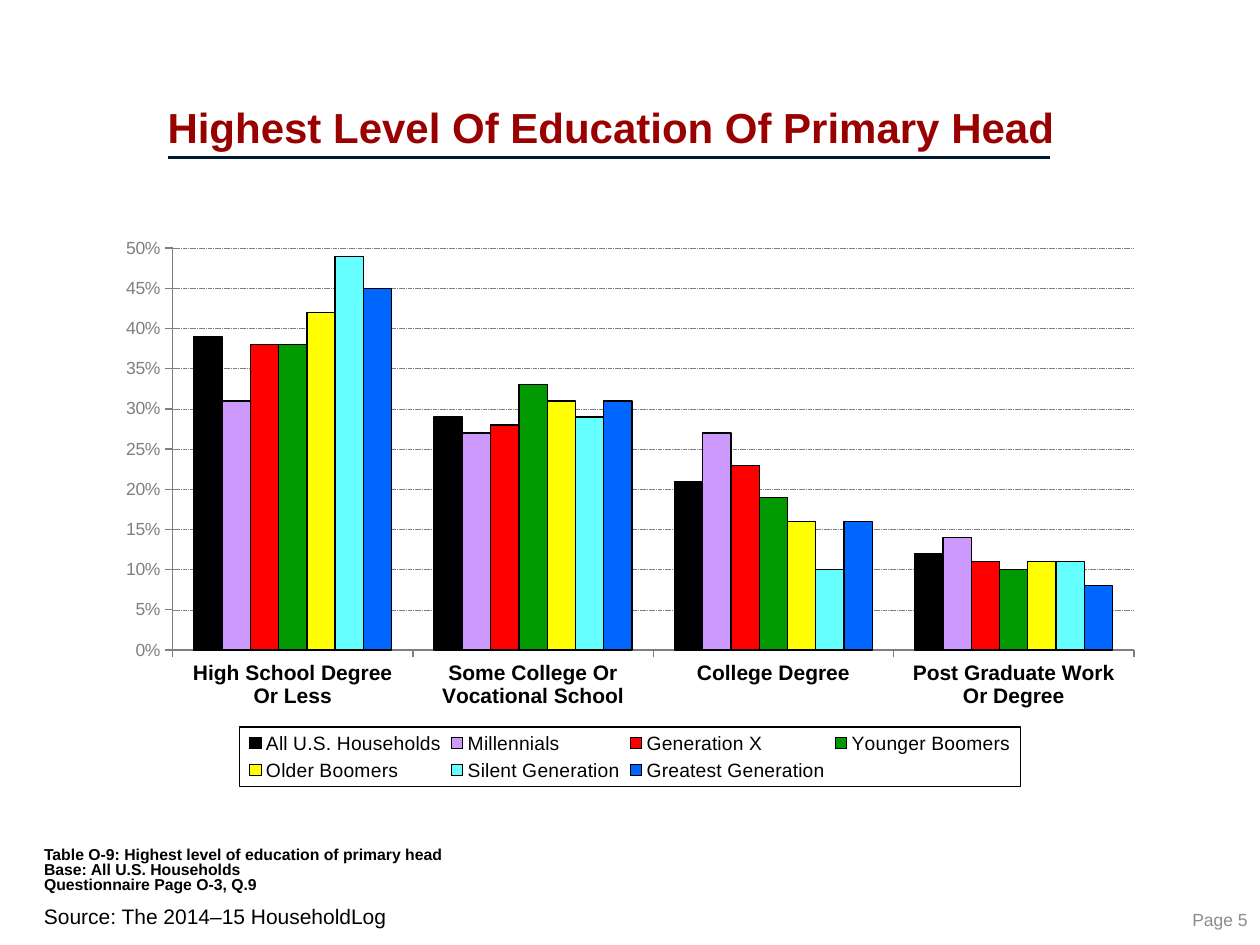
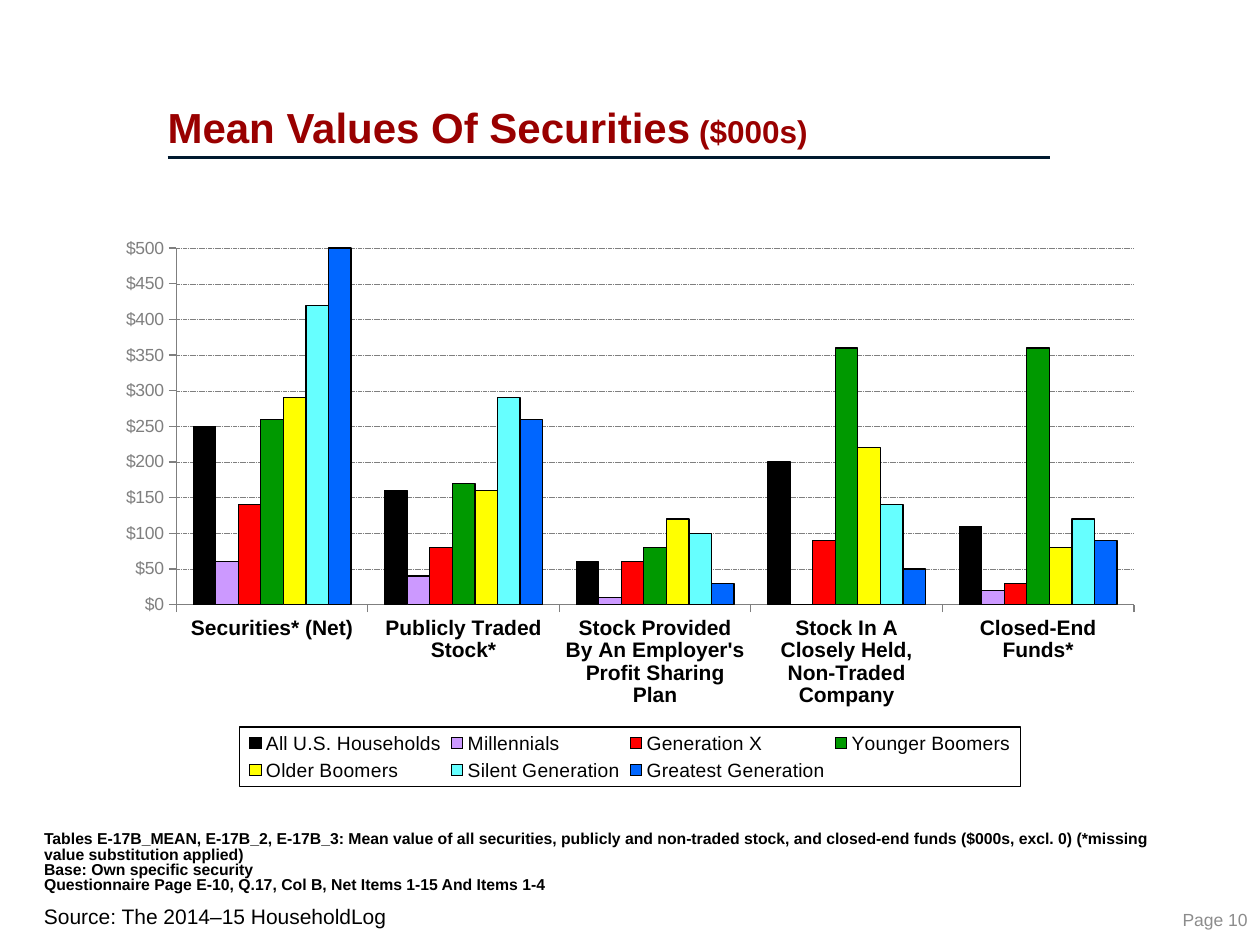
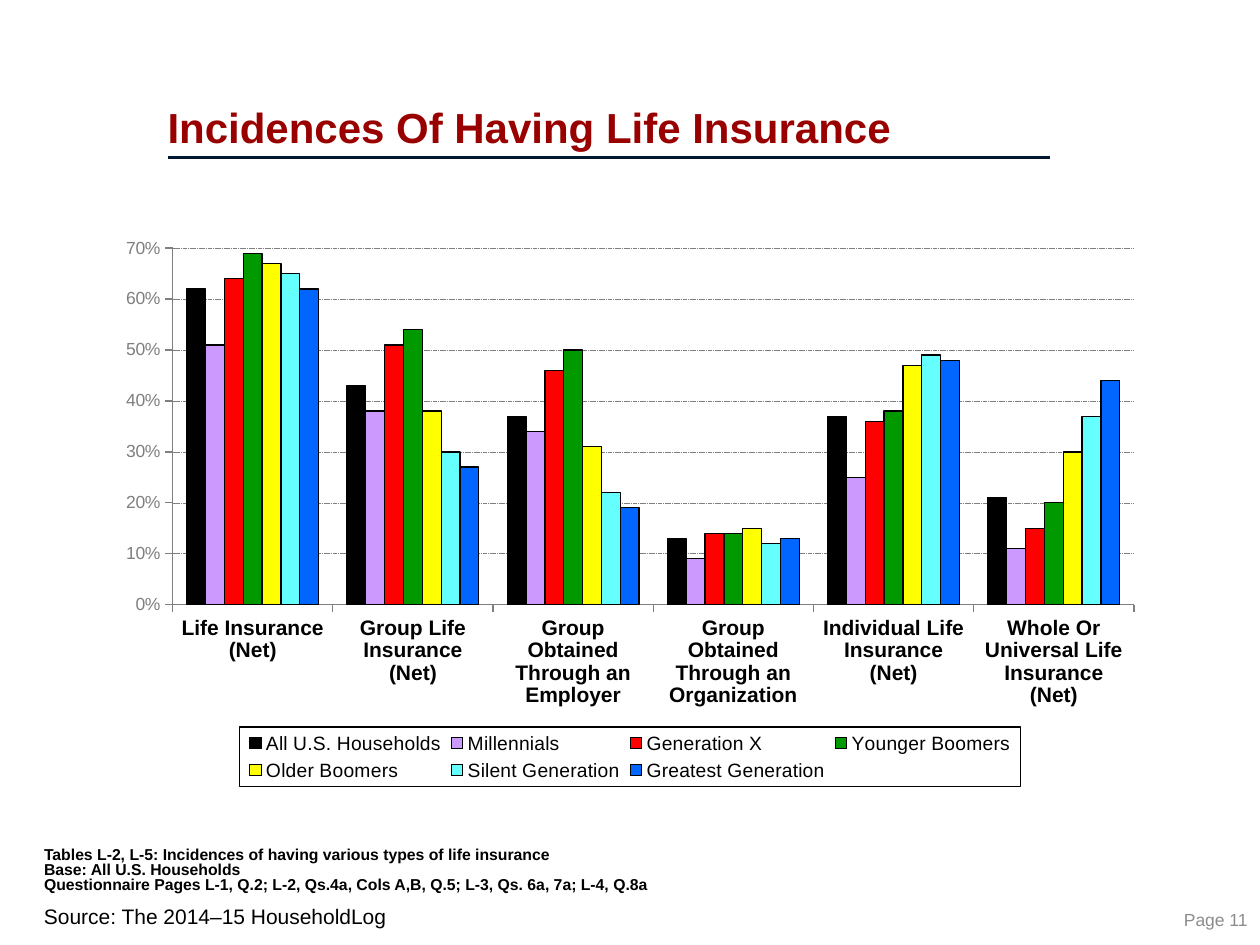
from dataclasses import dataclass

from lxml.etree import SubElement
from pptx import Presentation
from pptx.chart.chart import Chart
from pptx.chart.data import CategoryChartData
from pptx.dml.color import RGBColor
from pptx.enum.chart import XL_CHART_TYPE, XL_LEGEND_POSITION, XL_TICK_MARK
from pptx.enum.dml import MSO_LINE
from pptx.enum.shapes import MSO_CONNECTOR
from pptx.enum.text import MSO_ANCHOR, MSO_AUTO_SIZE, PP_ALIGN
from pptx.oxml import parse_xml
from pptx.oxml.ns import nsdecls, qn
from pptx.slide import Slide
from pptx.text.text import Font, TextFrame
from pptx.util import Inches, Pt

FONT = "Arial"
BLACK = RGBColor(0x00, 0x00, 0x00)
MAROON = RGBColor(0x99, 0x00, 0x00)
NAVY = RGBColor(0x00, 0x19, 0x2F)
AXIS_GRAY = RGBColor(0x7F, 0x7F, 0x7F)
PAGE_GRAY = RGBColor(0x8C, 0x8C, 0x8C)

SOURCE = "Source: The 2014–15 HouseholdLog"
GENERATIONS = {
    "All U.S. Households": BLACK,
    "Millennials": RGBColor(0xCC, 0x99, 0xFF),
    "Generation X": RGBColor(0xFF, 0x00, 0x00),
    "Younger Boomers": RGBColor(0x00, 0x99, 0x00),
    "Older Boomers": RGBColor(0xFF, 0xFF, 0x00),
    "Silent Generation": RGBColor(0x66, 0xFF, 0xFF),
    "Greatest Generation": RGBColor(0x00, 0x66, 0xFF),
}

Box = tuple[float, float, float, float]
CHART_BOX: Box = (0.83, 1.81, 8.33, 4.44)
LEGEND_BOX: Box = (1.9, 5.77, 6.2, 0.47)
PLOT_TOP, PLOT_RIGHT = 1.97, 9.0


@dataclass
class ChartPage:
    page: int
    title: str
    unit: str
    notes: list[str]
    number_format: str
    maximum: float
    step: float
    plot_left: float
    plot_bottom: float
    rows: dict[str, list[float]]


PAGES = [
    ChartPage(
        5, "Highest Level Of Education Of Primary Head", "",
        ["Table O-9: Highest level of education of primary head",
         "Base: All U.S. Households",
         "Questionnaire Page O-3, Q.9"],
        "0%", 0.5, 0.05, 1.37, 5.16,
        {
            "High School Degree Or Less": [0.39, 0.31, 0.38, 0.38, 0.42, 0.49, 0.45],
            "Some College Or Vocational School": [0.29, 0.27, 0.28, 0.33, 0.31, 0.29, 0.31],
            "College Degree": [0.21, 0.27, 0.23, 0.19, 0.16, 0.1, 0.16],
            "Post Graduate Work Or Degree": [0.12, 0.14, 0.11, 0.1, 0.11, 0.11, 0.08],
        },
    ),
    ChartPage(
        10, "Mean Values Of Securities", " ($000s)",
        ["Tables E-17B_MEAN, E-17B_2, E-17B_3: Mean value of all securities, publicly and "
         "non-traded stock, and closed-end funds ($000s, excl. 0) (*missing value "
         "substitution applied)",
         "Base: Own specific security",
         "Questionnaire Page E-10, Q.17, Col B, Net Items 1-15 And Items 1-4"],
        '"$"#,##0', 500, 50, 1.4, 4.8,
        {
            "Securities* (Net)": [250, 60, 140, 260, 290, 420, 500],
            "Publicly Traded Stock*": [160, 40, 80, 170, 160, 290, 260],
            "Stock Provided By An Employer's Profit Sharing Plan": [60, 10, 60, 80, 120, 100, 30],
            "Stock In A Closely Held, Non-Traded Company": [200, 0, 90, 360, 220, 140, 50],
            "Closed-End Funds*": [110, 20, 30, 360, 80, 120, 90],
        },
    ),
    ChartPage(
        11, "Incidences Of Having Life Insurance", "",
        ["Tables L-2, L-5: Incidences of having various types of life insurance",
         "Base: All U.S. Households",
         "Questionnaire Pages L-1, Q.2; L-2, Qs.4a, Cols A,B, Q.5; L-3, Qs. 6a, 7a; L-4, Q.8a"],
        "0%", 0.7, 0.1, 1.37, 4.8,
        {
            "Life Insurance (Net)": [0.62, 0.51, 0.64, 0.69, 0.67, 0.65, 0.62],
            "Group Life Insurance (Net)": [0.43, 0.38, 0.51, 0.54, 0.38, 0.3, 0.27],
            "Group Obtained Through an Employer": [0.37, 0.34, 0.46, 0.5, 0.31, 0.22, 0.19],
            "Group Obtained Through an Organization": [0.13, 0.09, 0.14, 0.14, 0.15, 0.12, 0.13],
            "Individual Life Insurance (Net)": [0.37, 0.25, 0.36, 0.38, 0.47, 0.49, 0.48],
            "Whole Or Universal Life Insurance (Net)": [0.21, 0.11, 0.15, 0.2, 0.3, 0.37, 0.44],
        },
    ),
]


def style(font: Font, size: float, color: RGBColor, bold: bool = False) -> None:
    font.name, font.size, font.bold = FONT, Pt(size), bold
    font.color.rgb = color


def add_text(s: Slide, box: Box, text: str, size: float, color: RGBColor,
             bold: bool = False, wrap: bool = True) -> TextFrame:
    tf = s.shapes.add_textbox(*map(Inches, box)).text_frame
    tf.word_wrap = wrap
    tf.text = text
    for r in tf.paragraphs[0].runs:
        style(r.font, size, color, bold)
    return tf


def add_heading(s: Slide, box: Box, text: str, size: float, color: RGBColor,
                inset: float) -> TextFrame:
    tf = add_text(s, box, text, size, color, bold=True)
    tf.vertical_anchor = MSO_ANCHOR.BOTTOM
    tf.margin_left, tf.margin_right = Inches(inset), 0
    tf.paragraphs[0].line_spacing = 0.8
    return tf


def add_frame(s: Slide, page: int) -> None:
    source = add_text(s, (0.25, 7.12, 8.58, 0.3), SOURCE, 12, BLACK)
    source.auto_size = MSO_AUTO_SIZE.SHAPE_TO_FIT_TEXT
    rule = s.shapes.add_connector(MSO_CONNECTOR.STRAIGHT, Inches(1.33), Inches(1.25),
                                  Inches(8.33), Inches(1.25))
    rule.line.color.rgb, rule.line.width = NAVY, Pt(2)
    SubElement(rule._element.spPr, qn("a:effectLst"))
    number = add_text(s, (9.26, 7.16, 0.74, 0.27), f"Page {page}", 10, PAGE_GRAY, wrap=False)
    number.auto_size = MSO_AUTO_SIZE.SHAPE_TO_FIT_TEXT
    number.vertical_anchor = MSO_ANCHOR.MIDDLE
    number.paragraphs[0].alignment = PP_ALIGN.RIGHT


def add_notes(s: Slide, notes: list[str]) -> None:
    tf = add_heading(s, (0, 6.32, 9.24, 0.82), "\v".join(notes), 9, BLACK, 0.35)
    for br in tf.paragraphs[0]._p.findall(qn("a:br")):
        SubElement(br, qn("a:rPr"), sz="1200")


def chart_layout(box: Box, inner: bool = False) -> object:
    left, top, width, height = CHART_BOX
    x, y, w, h = box
    shares = {"x": (x - left) / width, "y": (y - top) / height, "w": w / width, "h": h / height}
    target = '<c:layoutTarget val="inner"/>' if inner else ""
    modes = '<c:xMode val="edge"/><c:yMode val="edge"/>'
    values = "".join(f'<c:{k} val="{v:.4f}"/>' for k, v in shares.items())
    return parse_xml(f'<c:layout {nsdecls("c")}><c:manualLayout>{target}{modes}{values}'
                     "</c:manualLayout></c:layout>")


def style_axes(chart: Chart, page: ChartPage) -> None:
    cat, val = chart.category_axis, chart.value_axis
    style(cat.tick_labels.font, 12, BLACK, bold=True)
    style(val.tick_labels.font, 10, AXIS_GRAY)
    for axis in (cat, val):
        axis.major_tick_mark, axis.minor_tick_mark = XL_TICK_MARK.OUTSIDE, XL_TICK_MARK.NONE
        axis.format.line.color.rgb, axis.format.line.width = AXIS_GRAY, Pt(0.75)
    val.minimum_scale, val.maximum_scale, val.major_unit = 0, page.maximum, page.step
    val.tick_labels.number_format = page.number_format
    val.tick_labels.number_format_is_linked = False
    grid = val.major_gridlines.format.line
    grid.color.rgb, grid.width, grid.dash_style = AXIS_GRAY, Pt(0.25), MSO_LINE.SQUARE_DOT


def style_legend(chart: Chart) -> None:
    chart.has_legend = True
    legend = chart.legend
    legend.position, legend.include_in_layout = XL_LEGEND_POSITION.BOTTOM, False
    style(legend.font, 11, BLACK)
    element = legend._element
    for old in element.findall(qn("c:layout")):
        element.remove(old)
    element.find(qn("c:legendPos")).addnext(chart_layout(LEGEND_BOX))
    border = parse_xml(f'<c:spPr {nsdecls("c", "a")}><a:ln w="9525"><a:solidFill>'
                       f'<a:srgbClr val="{BLACK}"/></a:solidFill></a:ln></c:spPr>')
    element.find(qn("c:txPr")).addprevious(border)


def add_generation_chart(s: Slide, page: ChartPage) -> None:
    data = CategoryChartData(number_format=page.number_format)
    data.categories = list(page.rows)
    for name, values in zip(GENERATIONS, zip(*page.rows.values())):
        data.add_series(name, values)
    chart = s.shapes.add_chart(XL_CHART_TYPE.COLUMN_CLUSTERED, *map(Inches, CHART_BOX), data).chart
    chart.has_title = False
    style(chart.font, 10, BLACK)
    plot = chart.plots[0]
    plot.gap_width, plot.overlap, plot.vary_by_categories = 150, 0, False
    for series, color in zip(plot.series, GENERATIONS.values()):
        series.invert_if_negative = False
        series.format.fill.solid()
        series.format.fill.fore_color.rgb = color
        series.format.line.color.rgb, series.format.line.width = BLACK, Pt(0.75)
    style_axes(chart, page)
    style_legend(chart)
    area = chart._chartSpace.chart.plotArea
    for old in area.findall(qn("c:layout")):
        area.remove(old)
    plot_box = (page.plot_left, PLOT_TOP, PLOT_RIGHT - page.plot_left, page.plot_bottom - PLOT_TOP)
    area.insert(0, chart_layout(plot_box, inner=True))


def add_page(prs: Presentation, page: ChartPage) -> None:
    s = prs.slides.add_slide(prs.slide_layouts[6])
    add_frame(s, page.page)
    title = add_heading(s, (1.33, 0.08, 7.17, 1.17), page.title, 24, MAROON, 0)
    if page.unit:
        r = title.paragraphs[0].add_run()
        r.text = page.unit
        style(r.font, 18, MAROON, bold=True)
    add_notes(s, page.notes)
    add_generation_chart(s, page)


def main() -> None:
    prs = Presentation()
    prs.slide_width, prs.slide_height = Inches(10), Inches(7.5)
    for page in PAGES:
        add_page(prs, page)
    prs.save("out.pptx")


if __name__ == "__main__":
    main()
